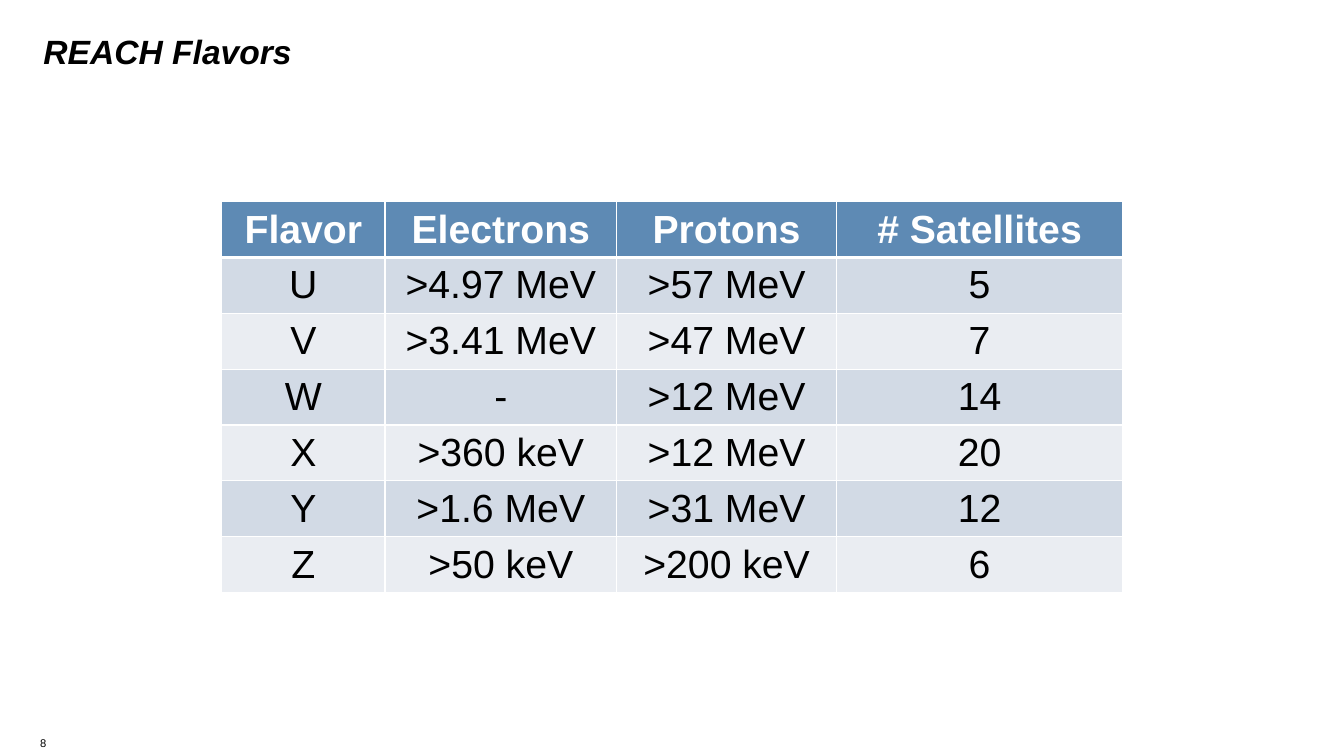
import pptx
import pptx.util
import pptx.dml.color
import pptx.enum.text
import pptx.oxml
import pptx.oxml.ns

Cm, Pt = pptx.util.Cm, pptx.util.Pt
ALIGN = pptx.enum.text.PP_ALIGN
ANCHOR = pptx.enum.text.MSO_ANCHOR

TITLE = "REACH Flavors"
NUMBER = "8"
ROWS = [
    ("Flavor", "Electrons", "Protons", "# Satellites"),
    ("U", ">4.97 MeV", ">57 MeV", "5"),
    ("V", ">3.41 MeV", ">47 MeV", "7"),
    ("W", "-", ">12 MeV", "14"),
    ("X", ">360 keV", ">12 MeV", "20"),
    ("Y", ">1.6 MeV", ">31 MeV", "12"),
    ("Z", ">50 keV", ">200 keV", "6"),
]
WIDTHS = (4.11, 5.84, 5.54, 7.21)
HEIGHT = 1.3
COLORS = {"head": "5E8AB4", "odd": "D2DAE5", "even": "EAEDF2",
          "white": "FFFFFF", "black": "000000"}
FONT = "Arial"


def color(name):
    return pptx.dml.color.RGBColor.from_string(COLORS[name])


def write(frame, text, size, tint="black", bold=False, italic=False,
          align=ALIGN.LEFT):
    para = frame.paragraphs[0]
    para.alignment = align
    run = para.add_run()
    run.text = text
    font = run.font
    font.name, font.size = FONT, Pt(size)
    font.bold, font.italic = bold, italic
    font.color.rgb = color(tint)


def edge(cell, side, width):
    """Add a white border to one side: L, R, T or B."""
    props = cell._tc.get_or_add_tcPr()
    props.append(pptx.oxml.parse_xml(
        f'<a:ln{side} {pptx.oxml.ns.nsdecls("a")} w="{Pt(width)}">'
        f'<a:solidFill><a:srgbClr val="{COLORS["white"]}"/></a:solidFill>'
        f'</a:ln{side}>'))


def add_title(slide):
    title = slide.shapes.title
    title.left, title.top = Cm(0.84), Cm(0.64)
    title.width, title.height = Cm(29.29), Cm(1.63)
    frame = title.text_frame
    frame.auto_size = pptx.enum.text.MSO_AUTO_SIZE.NONE
    frame.vertical_anchor = ANCHOR.TOP
    write(frame, TITLE, 24, bold=True, italic=True)


def add_grid(slide):
    shape = slide.shapes.add_table(
        len(ROWS), len(WIDTHS), Cm(5.59), Cm(5.08),
        Cm(sum(WIDTHS)), Cm(HEIGHT * len(ROWS)))
    table = shape.table
    for col, width in zip(table.columns, WIDTHS):
        col.width = Cm(width)
    for r, texts in enumerate(ROWS):
        table.rows[r].height = Cm(HEIGHT)
        head = r == 0
        fill = "head" if head else "odd" if r % 2 else "even"
        for c, text in enumerate(texts):
            cell = table.cell(r, c)
            cell.margin_top = cell.margin_bottom = Cm(0.11)
            cell.vertical_anchor = ANCHOR.MIDDLE
            for side in "LRTB":
                thick = (r, side) in ((0, "B"), (1, "T"))
                edge(cell, side, 3 if thick else 1)
            cell.fill.solid()
            cell.fill.fore_color.rgb = color(fill)
            write(cell.text_frame, text, 28, "white" if head else "black",
                  bold=head, align=ALIGN.CENTER)


def add_number(slide):
    box = slide.shapes.add_textbox(Cm(0.76), Cm(18.44), Cm(2.57), Cm(0.6))
    box.text_frame.word_wrap = True
    write(box.text_frame, NUMBER, 8)


def main():
    deck = pptx.Presentation()
    deck.slide_width, deck.slide_height = Cm(33.87), Cm(19.05)
    slide = deck.slides.add_slide(deck.slide_layouts[5])
    add_number(slide)
    add_title(slide)
    add_grid(slide)
    deck.save("out.pptx")


if __name__ == "__main__":
    main()
